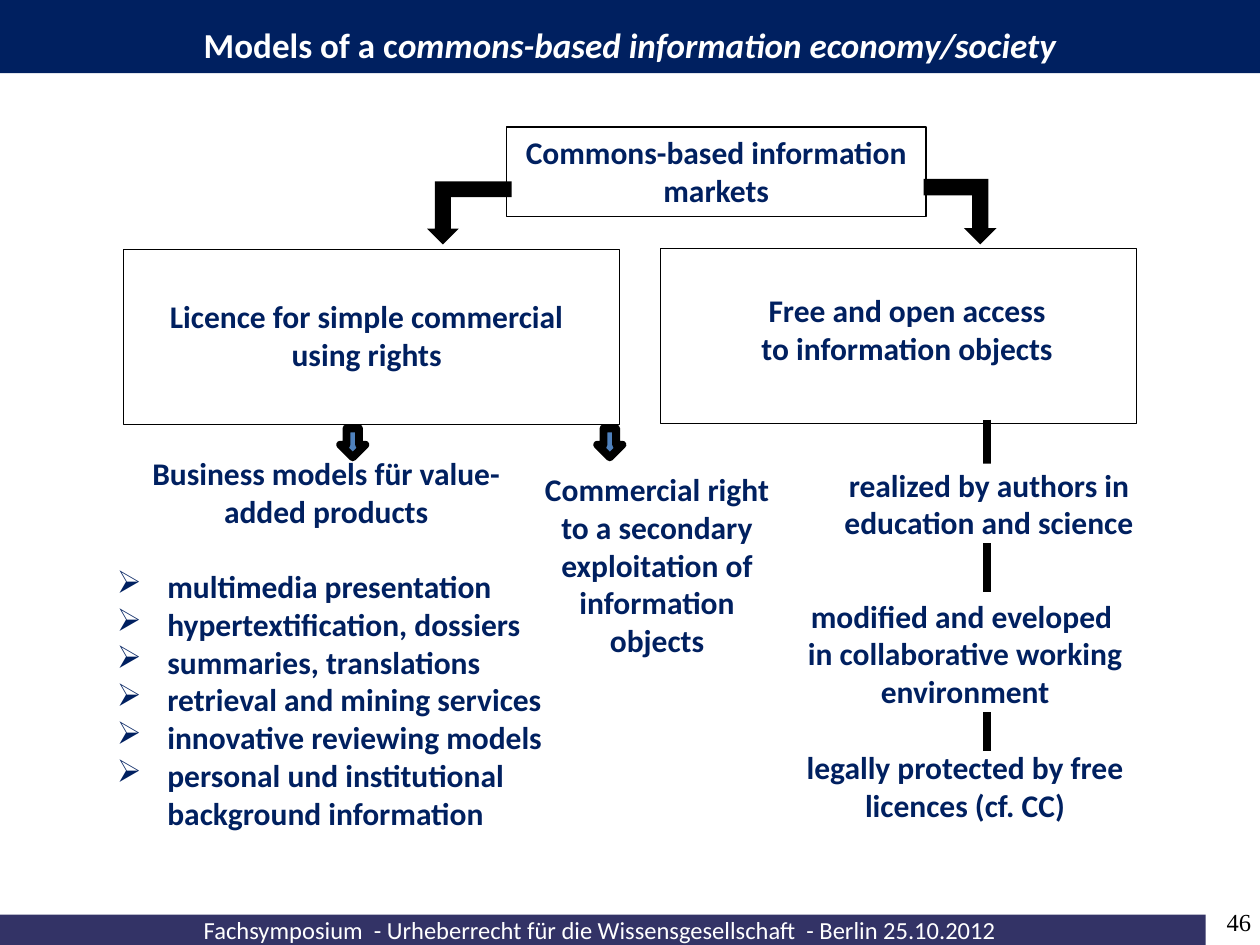
from lxml import etree
from pptx import Presentation
from pptx.dml.color import RGBColor
from pptx.enum import shapes, text
from pptx.oxml import ns
from pptx.util import Inches, Pt

COLORS = {"navy": "002060", "footer": "333366", "white": "FFFFFF",
          "black": "000000", "blue": "4F81BD"}
ROOMY = (0.1, 0.05)
TIGHT = (0.02, 0.01)
BULLET_INDENT = 0.4


def rgb(name):
    return RGBColor.from_string(COLORS[name])


class SlideBuilder:
    font = "Calibri"
    body_size = 18

    def __init__(self, slide):
        self.slide = slide

    def shape(self, kind, at, fill, line_width=None):
        shape = self.slide.shapes.add_shape(kind, *map(Inches, at))
        shape.shadow.inherit = False
        shape.fill.solid()
        shape.fill.fore_color.rgb = rgb(fill)
        if line_width:
            shape.line.color.rgb = rgb("black")
            shape.line.width = Pt(line_width)
        else:
            shape.line.fill.background()
        return shape

    def box(self, at, fill="white", line_width=None):
        return self.shape(shapes.MSO_SHAPE.RECTANGLE, at, fill, line_width)

    def label(self, shape, wording, size=body_size, color="navy", bold=True, font=font,
              insets=ROOMY, anchor=text.MSO_ANCHOR.TOP, align=text.PP_ALIGN.CENTER):
        frame = shape.text_frame
        frame.text = wording
        frame.word_wrap = True
        frame.vertical_anchor = anchor
        frame.margin_left = frame.margin_right = Inches(insets[0])
        frame.margin_top = frame.margin_bottom = Inches(insets[1])
        for paragraph in frame.paragraphs:
            paragraph.alignment = align
            for run in paragraph.runs:
                run.font.name = font
                run.font.size = Pt(size)
                run.font.bold = bold
                run.font.color.rgb = rgb(color)
        return frame

    def caption(self, at, wording):
        """A white, unframed box with tight margins and centred text."""
        self.label(self.box(at), wording, insets=TIGHT, anchor=text.MSO_ANCHOR.MIDDLE)

    def textbox(self, at, wording, **style):
        return self.label(self.slide.shapes.add_textbox(*map(Inches, at)), wording, **style)

    def bullets(self, at, items):
        frame = self.textbox(at, "\n".join(items), anchor=text.MSO_ANCHOR.MIDDLE,
                             align=text.PP_ALIGN.LEFT)
        for paragraph in frame.paragraphs:
            properties = paragraph._p.get_or_add_pPr()
            properties.set("marL", str(Inches(BULLET_INDENT)))
            properties.set("indent", str(-Inches(BULLET_INDENT)))
            etree.SubElement(properties, ns.qn("a:buChar")).set("char", "➢")

    def bent_arrow(self, at, to_left):
        """An arrow that runs sideways and then turns down."""
        arrow = self.shape(shapes.MSO_SHAPE.BENT_UP_ARROW, at, "black")
        if to_left:
            arrow.rotation = 180
        else:
            arrow._element.spPr.find(ns.qn("a:xfrm")).set("flipV", "1")

    def down_arrow(self, at):
        self.shape(shapes.MSO_SHAPE.DOWN_ARROW, at, "blue", 4.5)

    def vertical_line(self, x, top, bottom):
        line = self.slide.shapes.add_connector(
            shapes.MSO_CONNECTOR.STRAIGHT, *map(Inches, (x, top, x, bottom)))
        line.line.color.rgb = rgb("black")
        line.line.width = Pt(4.5)
        etree.SubElement(line._element.spPr, ns.qn("a:effectLst"))


def main():
    deck = Presentation()
    deck.slide_width, deck.slide_height = Inches(10), Inches(7.5)
    page = SlideBuilder(deck.slides.add_slide(deck.slide_layouts[6]))

    page.label(page.box((0, 7.26, 9.57, 0.24), "footer"),
               "Fachsymposium  - Urheberrecht für die Wissensgesellschaft  - Berlin 25.10.2012 ",
               size=14, color="white", bold=False, insets=(0, 0))
    page.textbox((9.25, 7.2, 0.68, 0.3), "46", size=14, color="black", bold=False,
                 font="Times New Roman", insets=(0, 0), align=text.PP_ALIGN.RIGHT)

    title = page.label(page.box((0, -0.03, 10, 0.61), "navy"), "Models of a c",
                       size=20, color="white").paragraphs[0]
    title.line_spacing = 1.5
    emphasis = title.add_run()
    emphasis.text = "ommons-based information economy/society"
    emphasis.font.name = page.font
    emphasis.font.size = Pt(20)
    emphasis.font.bold = emphasis.font.italic = True
    emphasis.font.color.rgb = rgb("white")

    page.box((5.24, 1.97, 3.78, 1.39), line_width=0.75)
    page.caption((1.06, 3.59, 3.06, 0.63), "Business models für value-added products")
    page.label(page.box((4.02, 1.01, 3.33, 0.71), line_width=1),
               "Commons-based information markets")
    page.label(page.box((5.87, 2.26, 2.66, 0.71)),
               "Free and open access to information objects")
    page.bent_arrow((7.33, 1.42, 0.58, 0.52), to_left=False)

    page.box((0.98, 1.98, 3.94, 1.39), line_width=0.75)
    page.label(page.box((1.22, 2.15, 3.38, 1.01)),
               "Licence for simple commercial using rights", anchor=text.MSO_ANCHOR.MIDDLE)
    page.bent_arrow((3.39, 1.44, 0.67, 0.5), to_left=True)

    page.bullets((0.83, 4.44, 3.62, 2.22), [
        "multimedia presentation",
        "hypertextification, dossiers",
        "summaries, translations",
        "retrieval and mining services",
        "innovative reviewing models",
        "personal und institutional background information",
    ])
    page.caption((4.25, 3.71, 1.93, 1.54),
                 "Commercial right to a secondary exploitation of information objects")
    for left in (2.7, 4.74):
        page.down_arrow((left, 3.4, 0.2, 0.23))

    page.caption((6.38, 5.92, 2.56, 0.63), "legally protected by free licences (cf. CC)")
    for top in (3.33, 4.28, 5.54):
        page.vertical_line(7.83, top, top + 0.42)
    page.caption((6.38, 4.72, 2.56, 0.93),
                 "modified and eveloped  in collaborative working environment")
    page.caption((6.57, 3.68, 2.56, 0.63), "realized by authors in education and science")

    deck.save("out.pptx")


if __name__ == "__main__":
    main()
